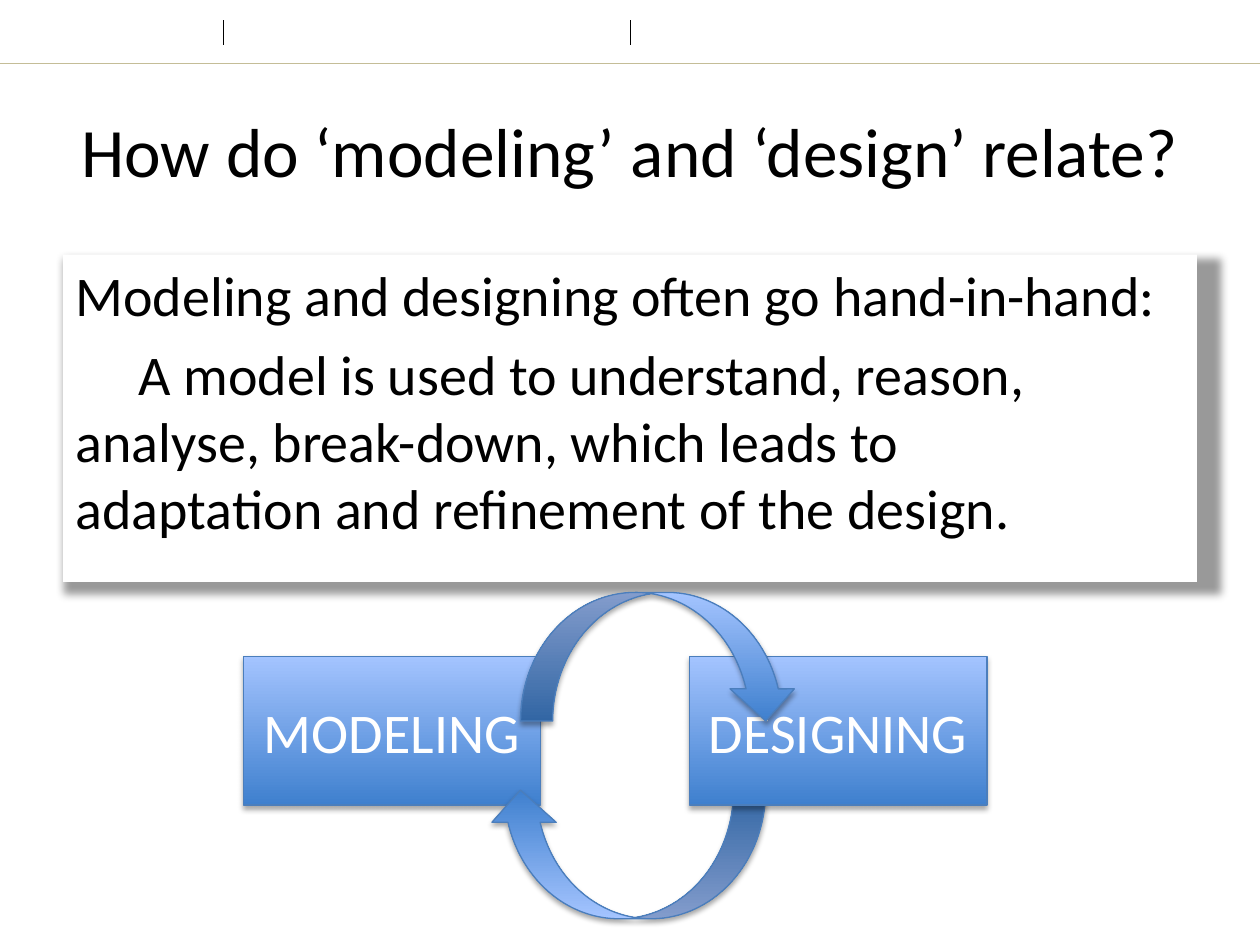
from dataclasses import dataclass

from lxml.etree import SubElement as Sub
from pptx import Presentation
from pptx.dml.color import RGBColor as RGB
from pptx.enum.shapes import MSO_CONNECTOR as Conn, MSO_SHAPE as Kind
from pptx.enum.text import MSO_ANCHOR as Anchor, MSO_AUTO_SIZE as Auto, PP_ALIGN as Align
from pptx.oxml.ns import qn
from pptx.util import Pt


@dataclass(frozen=True)
class Theme:
    font: str = "Calibri"
    ink: str = "000000"
    paper: str = "FFFFFF"
    rule: str = "C4BD97"
    edge: str = "4B7EBC"
    deep: str = "3F80CE"
    pale: str = "A4C4FF"
    head: float = 39.6
    text: float = 32


THEME = Theme()


def assign(item, values):
    for name, value in values.items():
        setattr(item, name, value)


def place(shape, left, top, width, height):
    box = dict(left=left, top=top, width=width, height=height)
    assign(shape, {name: Pt(value) for name, value in box.items()})


def style(para, size, color, align):
    para.alignment = align
    assign(para.font, dict(name=THEME.font, size=Pt(size)))
    para.font.color.rgb = RGB.from_string(color)


def shade(shape, alpha, **attrs):
    """Replace the inherited shadow with a black outer one."""
    shape.shadow.inherit = False
    effects = shape._element.spPr.find(qn("a:effectLst"))
    outer = Sub(effects, qn("a:outerShdw"), {k: str(v) for k, v in attrs.items()})
    color = Sub(outer, qn("a:srgbClr"), val=THEME.ink)
    Sub(color, qn("a:alpha"), val=str(alpha * 1000))


def add_rule(slide, start, end, color, width):
    line = slide.shapes.add_connector(Conn.STRAIGHT, *map(Pt, start + end))
    line.line.color.rgb = RGB.from_string(color)
    line.line.width = Pt(width)
    Sub(line._element.spPr, qn("a:effectLst"))


def set_title(shape, text):
    place(shape, 36, 36, 648, 99)
    frame = shape.text_frame
    frame.text = text
    assign(frame, dict(auto_size=Auto.NONE, vertical_anchor=Anchor.MIDDLE))
    style(frame.paragraphs[0], THEME.head, THEME.ink, Align.CENTER)


def set_body(shape, items):
    """Fill the body with (text, first-line indent) items."""
    place(shape, 36, 145.5, 648, 187)
    shape.fill.solid()
    shape.fill.fore_color.rgb = RGB.from_string(THEME.paper)
    shade(shape, 40, blurRad=Pt(5), sx=102000, sy=102000, algn="tl", rotWithShape=0)
    frame = shape.text_frame
    frame.auto_size = Auto.NONE
    for i, (text, indent) in enumerate(items):
        para = frame.add_paragraph() if i else frame.paragraphs[0]
        para.text = text
        props = para._p.get_or_add_pPr()
        props.set("marL", "0")
        props.set("indent", str(Pt(indent)))
        Sub(props, qn("a:buNone"))
        para.space_before = Pt(6.4 if i else 0)
        style(para, THEME.text, THEME.ink, Align.LEFT)


def add_block(slide, kind, box, text="", turn=0):
    """Add a blue gradient shape with a soft shadow."""
    shape = slide.shapes.add_shape(kind, *map(Pt, box))
    shape.rotation = turn
    shape.fill.gradient()
    shape.fill.gradient_angle = 90
    for stop, color in zip(shape.fill.gradient_stops, (THEME.deep, THEME.pale)):
        stop.color.rgb = RGB.from_string(color)
    shape.line.color.rgb = RGB.from_string(THEME.edge)
    shape.line.width = Pt(0.75)
    shade(shape, 35, blurRad=Pt(3.1), dist=Pt(1.8), dir=5400000, rotWithShape=0)
    if text:
        frame = shape.text_frame
        frame.text = text
        frame.vertical_anchor = Anchor.MIDDLE
        style(frame.paragraphs[0], THEME.text, THEME.paper, Align.CENTER)


def main():
    deck = Presentation()
    assign(deck, dict(slide_width=Pt(720), slide_height=Pt(540)))
    slide = deck.slides.add_slide(deck.slide_layouts[1])

    add_rule(slide, (0, 36), (720, 36), THEME.rule, 0.25)
    for x in (127.5, 360):
        add_rule(slide, (x, 11.5), (x, 26), THEME.ink, 0.5)

    set_title(slide.shapes.title, "How do ‘modeling’ and ‘design’ relate?")
    set_body(slide.placeholders[1], [
        ("Modeling and designing often go hand-in-hand:", 0),
        ("A model is used to understand, reason,\vanalyse, break-down, "
         "which leads to\vadaptation and refinement of the design.", 36),
    ])

    block, arrow = (170, 85), (158.5, 73.5)
    add_block(slide, Kind.RECTANGLE, (139, 375) + block, "MODELING")
    add_block(slide, Kind.CURVED_DOWN_ARROW, (279, 451.5) + arrow, turn=180)
    add_block(slide, Kind.RECTANGLE, (394, 375) + block, "DESIGNING")
    add_block(slide, Kind.CURVED_DOWN_ARROW, (297.5, 338.5) + arrow)

    deck.save("out.pptx")


if __name__ == "__main__":
    main()
